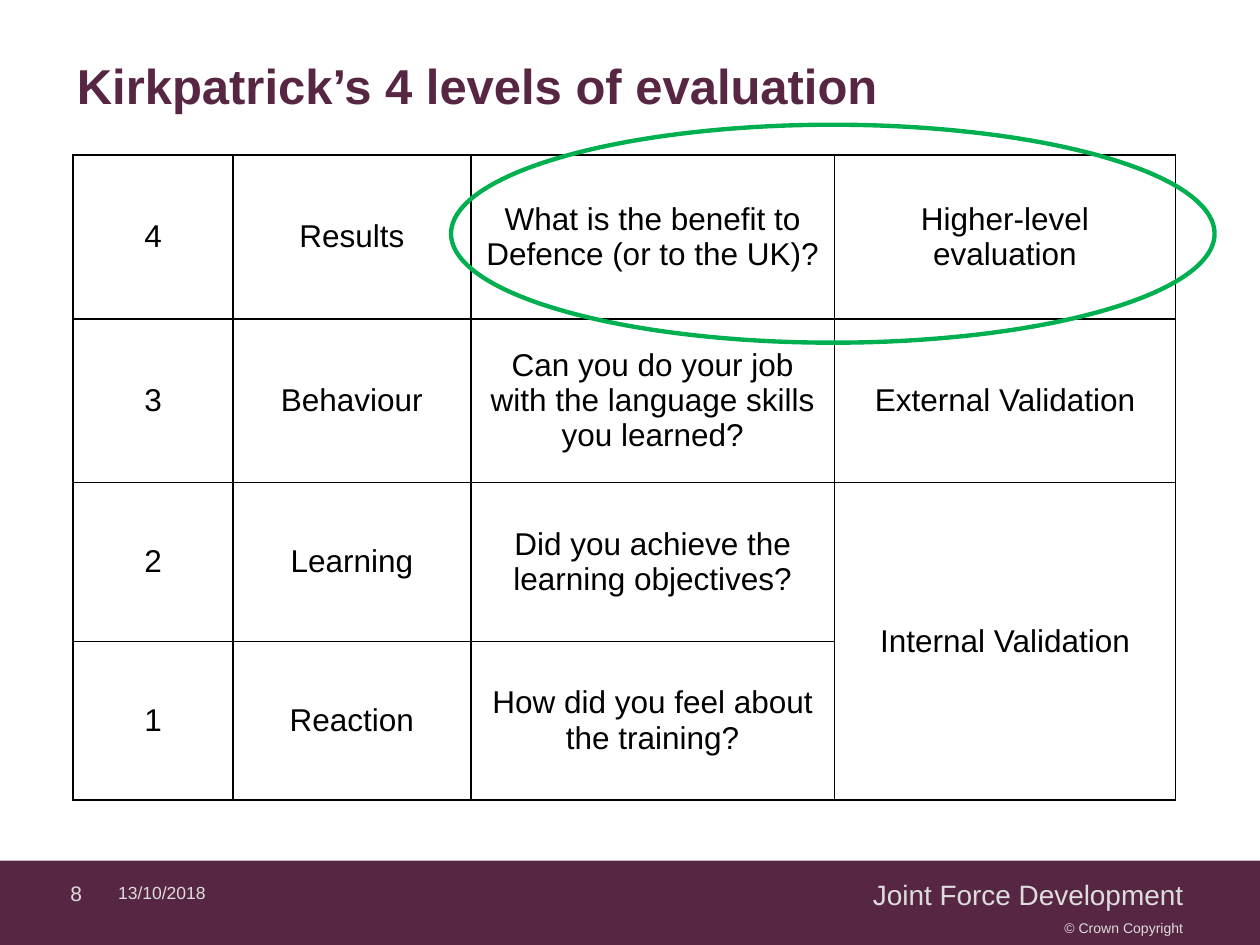
from lxml import etree
from pptx import Presentation
from pptx.dml.color import RGBColor
from pptx.enum.shapes import MSO_SHAPE
from pptx.enum.text import MSO_ANCHOR, MSO_AUTO_SIZE, PP_ALIGN
from pptx.oxml.ns import qn
from pptx.util import Inches, Pt

LEFT, CENTER, RIGHT = PP_ALIGN.LEFT, PP_ALIGN.CENTER, PP_ALIGN.RIGHT
MIDDLE = MSO_ANCHOR.MIDDLE
NO_FIT = MSO_AUTO_SIZE.NONE
RECT, OVAL = MSO_SHAPE.RECTANGLE, MSO_SHAPE.OVAL

PLUM = RGBColor(0x57, 0x26, 0x42)
PALE = RGBColor(0xDD, 0xDD, 0xDD)
GREEN = RGBColor(0x00, 0xB0, 0x50)
BLACK = RGBColor(0, 0, 0)
WHITE = RGBColor(255, 255, 255)
FONT = "Arial"

COLS = (1.27, 1.89, 2.89, 2.71)
ROWS = (1.3, 1.3, 1.26, 1.26)
LEVELS = (
    ("4", "Results", "What is the benefit to Defence (or to the UK)?",
     "Higher-level evaluation"),
    ("3", "Behaviour",
     "Can you do your job with the language skills you learned?",
     "External Validation"),
    ("2", "Learning", "Did you achieve the learning objectives?",
     "Internal Validation"),
    ("1", "Reaction", "How did you feel about the training?", ""),
)


def inches(box):
    return [Inches(v) for v in box]


def style(para, size, color, align, bold=False):
    para.alignment = align
    font = para.font
    font.name, font.size, font.bold = FONT, Pt(size), bold
    font.color.rgb = color


def add_title(slide, box, text):
    title = slide.shapes.title
    title.left, title.top, title.width, title.height = inches(box)
    frame = title.text_frame
    frame.text = text
    frame.auto_size = NO_FIT
    frame.vertical_anchor = MIDDLE
    style(frame.paragraphs[0], 28, PLUM, LEFT, True)


def add_label(slide, box, text, size, align):
    frame = slide.shapes.add_textbox(*inches(box)).text_frame
    frame.word_wrap = True
    frame.vertical_anchor = MIDDLE
    frame.text = text
    style(frame.paragraphs[0], size, PALE, align)


def add_footer(slide, box):
    x, y, w, h = box
    band = slide.shapes.add_shape(RECT, *inches(box))
    band.shadow.inherit = False
    band.fill.solid()
    band.fill.fore_color.rgb = PLUM
    band.line.fill.background()
    labels = (
        ("8", 0.03, 0.045, 0.36, 12, RIGHT),
        ("13/10/2018", 0.084, 0.1, 0.36, 10, LEFT),
        ("Joint Force Development", 0.354, 0.595, 0.38, 16, RIGHT),
        ("© Crown Copyright", 0.354, 0.595, 0.75, 8, RIGHT),
    )
    tall = h * 0.5
    for text, left, wide, mid, size, align in labels:
        place = (x + w * left, y + h * mid - tall / 2, w * wide, tall)
        add_label(slide, place, text, size, align)


def add_edges(cell):
    props = cell._tc.get_or_add_tcPr()
    for side in ("lnL", "lnR", "lnT", "lnB"):
        line = etree.SubElement(props, qn("a:" + side), w=str(Pt(1)))
        fill = etree.SubElement(line, qn("a:solidFill"))
        etree.SubElement(fill, qn("a:srgbClr"), val=str(BLACK))


def add_levels(slide, box):
    x, y, w, h = box
    table = slide.shapes.add_table(len(ROWS), len(COLS), *inches(box)).table
    table.first_row = table.horz_banding = False
    for col, part in zip(table.columns, COLS):
        col.width = Inches(w * part / sum(COLS))
    for row, part in zip(table.rows, ROWS):
        row.height = Inches(h * part / sum(ROWS))
    for r, texts in enumerate(LEVELS):
        for c, text in enumerate(texts):
            cell = table.cell(r, c)
            add_edges(cell)
            cell.fill.solid()
            cell.fill.fore_color.rgb = WHITE
            cell.vertical_anchor = MIDDLE
            cell.text = text
            style(cell.text_frame.paragraphs[0], 18, BLACK, CENTER)
    table.cell(2, 3).merge(table.cell(3, 3))


def add_ring(slide, box):
    ring = slide.shapes.add_shape(OVAL, *inches(box))
    ring.shadow.inherit = False
    ring.fill.background()
    ring.line.color.rgb = GREEN
    ring.line.width = Pt(2.5)


def main():
    deck = Presentation()
    deck.slide_width, deck.slide_height = Inches(10), Inches(7.5)
    slide = deck.slides.add_slide(deck.slide_layouts[5])
    add_footer(slide, (0, 6.83, 10, 0.71))
    add_title(slide, (0.51, 0.05, 8.52, 1.25),
              "Kirkpatrick’s 4 levels of evaluation")
    add_levels(slide, (0.58, 1.23, 8.75, 5.12))
    add_ring(slide, (3.58, 0.99, 6.06, 1.73))
    deck.save("out.pptx")


if __name__ == "__main__":
    main()
